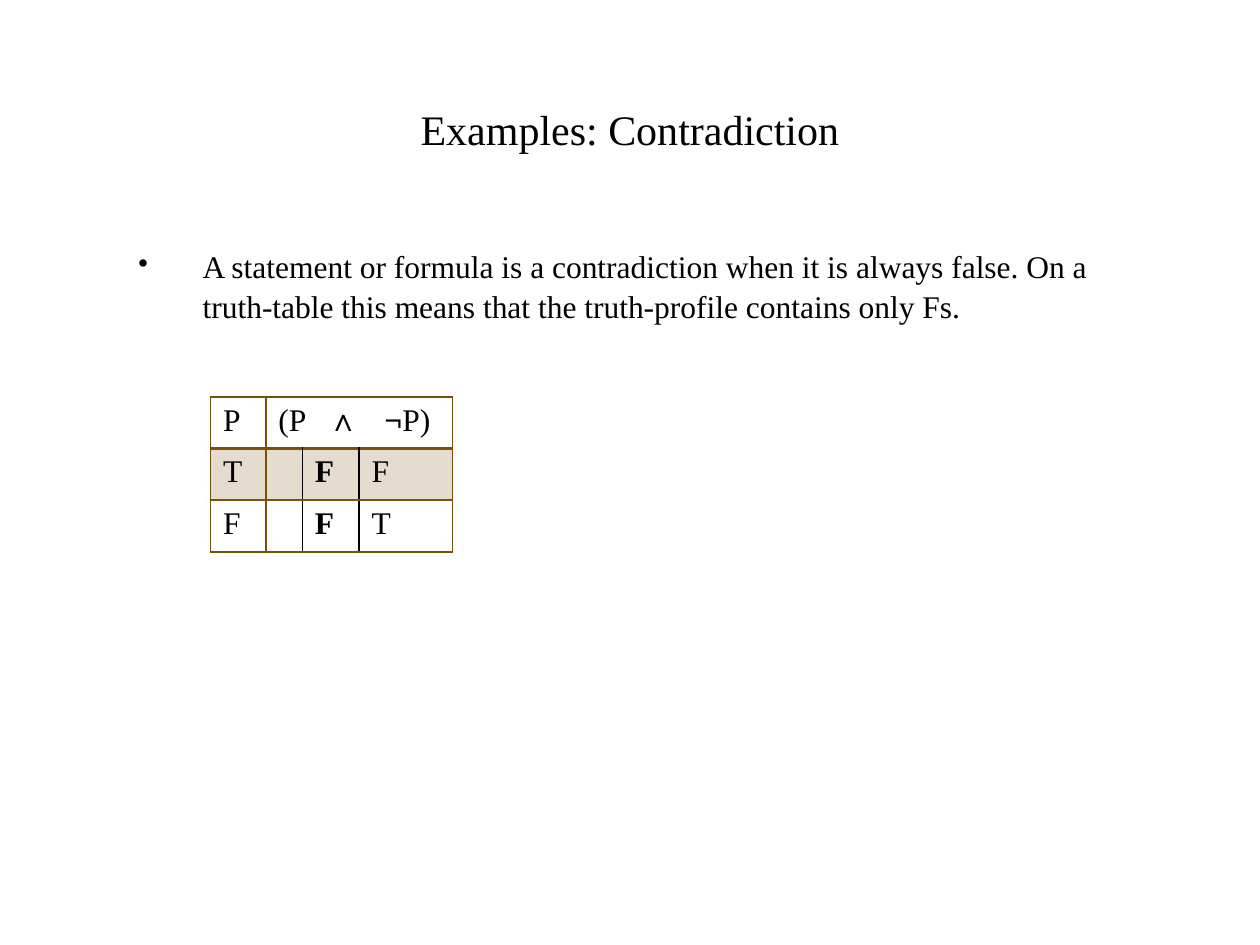
from dataclasses import dataclass

from lxml import etree
from pptx import Presentation
from pptx import util as u
from pptx.dml.color import RGBColor
from pptx.enum import text
from pptx.oxml import ns

WIDE, HIGH = 10, 7.5
FACE = "Times New Roman"
HUES = {"ink": "000000", "rule": "7A500A"}
COLS = [0.44, 0.29, 0.45, 0.74]
ROW = 0.41
TABS = [0.39, 0.84]


@dataclass
class Run:
    words: str
    bold: bool = False


@dataclass
class Box:
    """Place as shares of the slide's width and height."""
    x: float
    y: float
    w: float
    h: float

    def place(self) -> list[int]:
        return [u.Inches(self.x * WIDE), u.Inches(self.y * HIGH),
                u.Inches(self.w * WIDE), u.Inches(self.h * HIGH)]


GRID = [
    [[Run("P")], [Run("(P\t"), Run("∧\t¬", True), Run("P)")], [], []],
    [[Run("T")], [], [Run("F", True)], [Run("F")]],
    [[Run("F")], [], [Run("F", True)], [Run("T")]],
]


def sub(node, tag: str, **attrs):
    return etree.SubElement(node, ns.qn(tag), attrs)


def write(frame, runs: list[Run], size: float = 18, align=None, line=None,
          bullet: bool = False, tabs=()) -> None:
    para = frame.paragraphs[0]
    if align is not None:
        para.alignment = align
    if line:
        para.line_spacing = line
    props = para._p.get_or_add_pPr()
    if bullet:
        props.set("marL", str(u.Inches(0.51)))
        props.set("indent", str(-u.Inches(0.51)))
        sub(props, "a:buSzPct", val="90000")
        sub(props, "a:buChar", char="•")
    if tabs:
        stops = sub(props, "a:tabLst")
        for stop in tabs:
            sub(stops, "a:tab", pos=str(u.Inches(stop)), algn="l")
    para.font.size = u.Pt(size)
    for part in runs:
        run = para.add_run()
        run.text = part.words
        run.font.name = FACE
        run.font.size = u.Pt(size)
        run.font.bold = part.bold
        run.font.color.rgb = RGBColor.from_string(HUES["ink"])


def add_text(slide, box: Box, words: str, anchor=text.MSO_ANCHOR.TOP, **style) -> None:
    frame = slide.shapes.add_textbox(*box.place()).text_frame
    frame.word_wrap = True
    frame.vertical_anchor = anchor
    write(frame, [Run(words)], **style)


def edge(cell, side: str, hue: str, width: float) -> None:
    line = sub(cell._tc.get_or_add_tcPr(), "a:ln" + side, w=str(u.Pt(width)))
    sub(sub(line, "a:solidFill"), "a:srgbClr", val=HUES[hue])


def rule(cell, row: int, col: int) -> None:
    """Draw the borders; the inner columns are parted by ink below the header."""
    edge(cell, "L", "ink" if row and col > 1 else "rule", 1)
    edge(cell, "R", "ink" if row and col in (1, 2) else "rule", 1)
    edge(cell, "T", "rule", 2 if row == 1 else 1)
    edge(cell, "B", "rule", 2 if row == 0 else 1)


def shade(cell, row: int) -> None:
    if row != 1:
        cell.fill.background()
        return
    cell.fill.solid()
    cell.fill.fore_color.rgb = RGBColor.from_string(HUES["rule"])
    tint = cell._tc.tcPr.find(ns.qn("a:solidFill"))[0]
    sub(tint, "a:alpha", val="20000")


def add_grid(slide, box: Box) -> None:
    table = slide.shapes.add_table(len(GRID), len(COLS), *box.place()).table
    table.first_row = table.horz_banding = False
    for col, width in zip(table.columns, COLS):
        col.width = u.Inches(width)
    for row in table.rows:
        row.height = u.Inches(ROW)
    table.cell(0, 1).merge(table.cell(0, 3))
    for r, line in enumerate(GRID):
        for c, runs in enumerate(line):
            cell = table.cell(r, c)
            rule(cell, r, c)
            shade(cell, r)
            write(cell.text_frame, runs, tabs=TABS if (r, c) == (0, 1) else ())


def main() -> None:
    deck = Presentation()
    deck.slide_width, deck.slide_height = u.Inches(WIDE), u.Inches(HIGH)
    slide = deck.slides.add_slide(deck.slide_layouts[6])
    add_text(slide, Box(0.1, 0.55 / HIGH, 0.8, 0.95 / HIGH),
             "Examples: Contradiction", anchor=text.MSO_ANCHOR.MIDDLE,
             size=24, align=text.PP_ALIGN.CENTER)
    add_text(slide, Box(0.1, 1.9 / HIGH, 0.8, 4.44 / HIGH),
             "A statement or formula is a contradiction when it is always false. "
             "On a truth-table this means that the truth-profile contains only Fs.",
             bullet=True, line=1.05)
    add_grid(slide, Box(0.167, 0.42, sum(COLS) / WIDE, ROW * len(GRID) / HIGH))
    deck.save("out.pptx")


if __name__ == "__main__":
    main()
